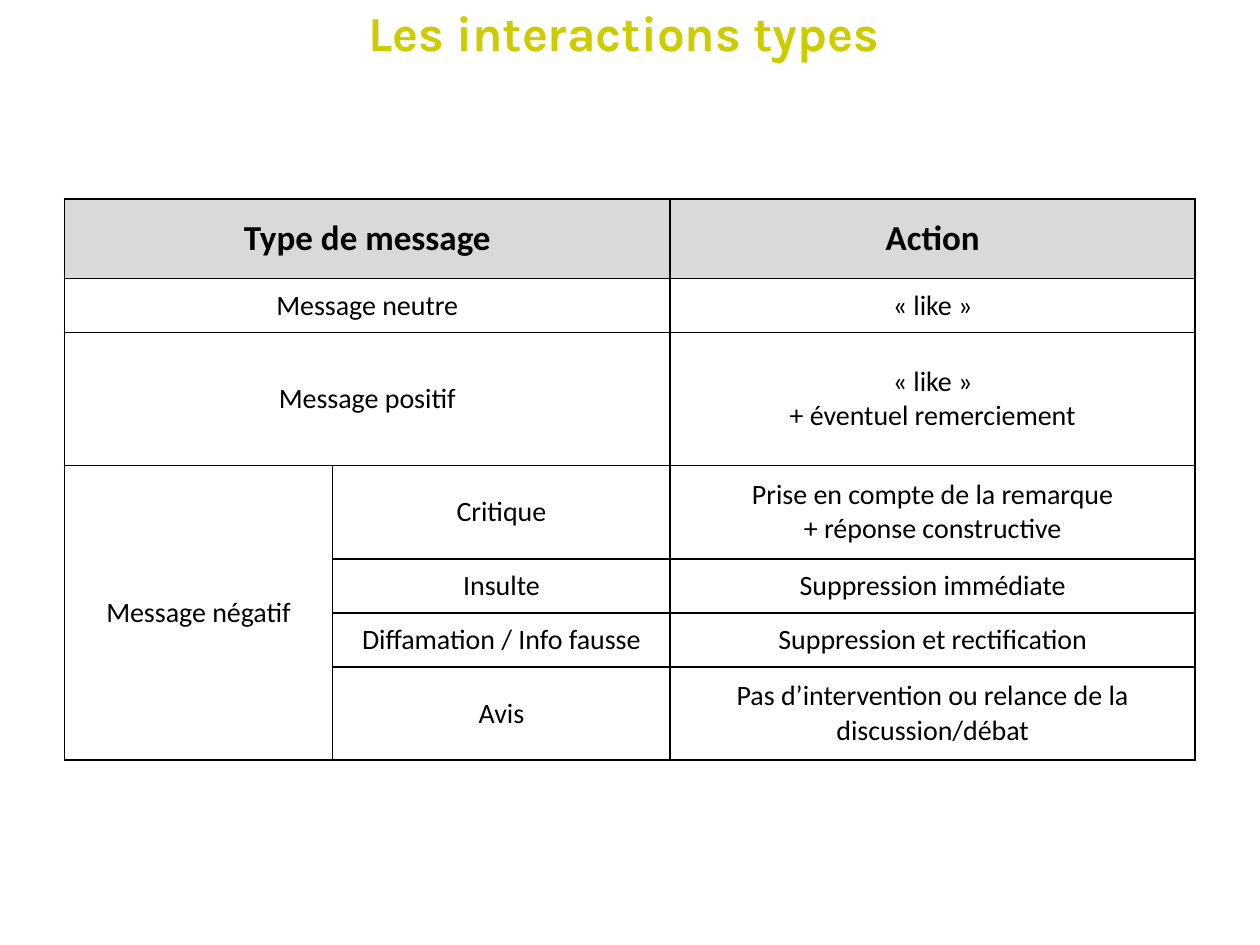
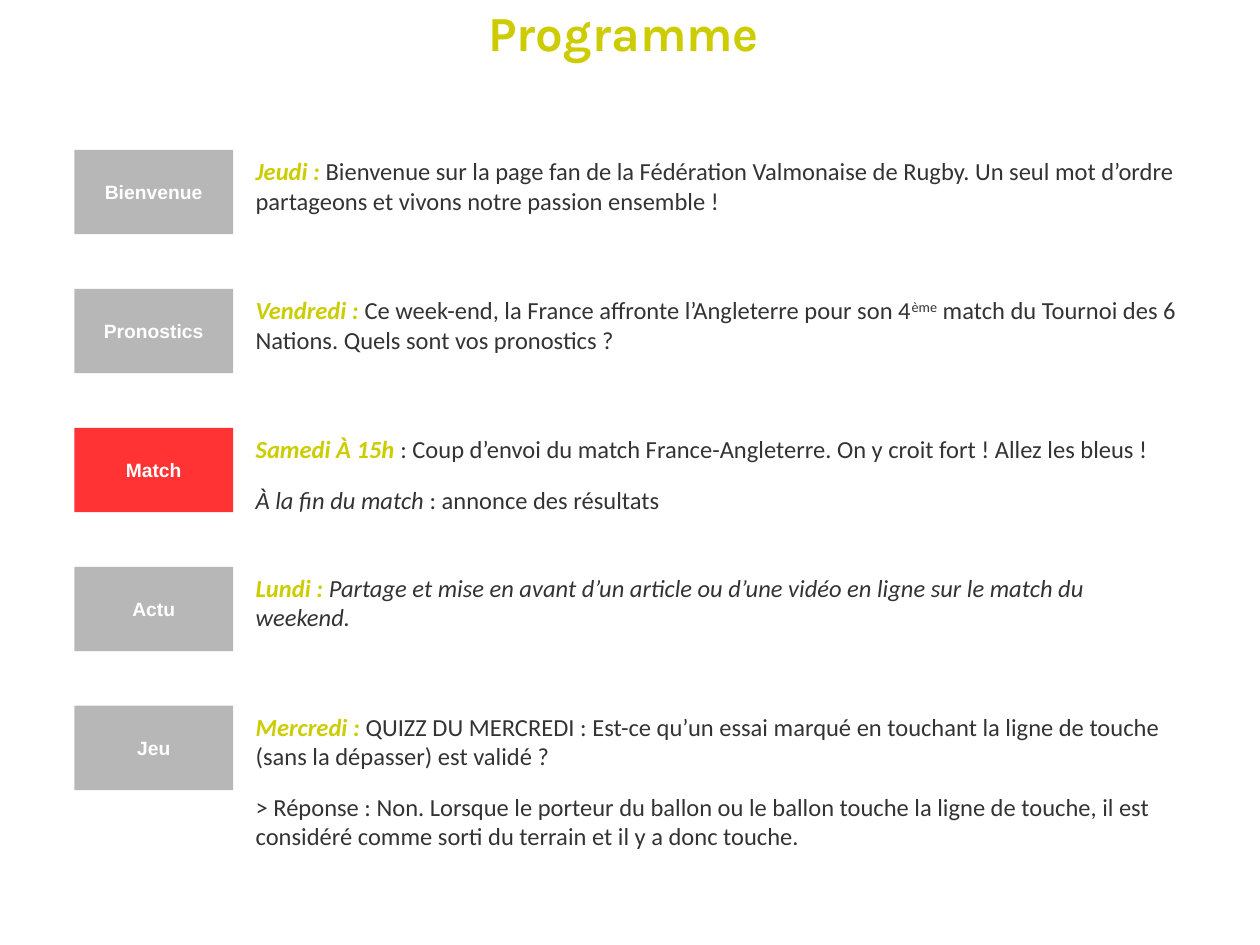
from lxml import etree
from pptx import Presentation
from pptx.dml.color import RGBColor
from pptx.enum.shapes import MSO_SHAPE
from pptx.enum.text import MSO_ANCHOR, PP_ALIGN
from pptx.oxml.ns import qn
from pptx.util import Pt

RECT = MSO_SHAPE.RECTANGLE
MIDDLE = MSO_ANCHOR.MIDDLE
LEFT, CENTER = PP_ALIGN.LEFT, PP_ALIGN.CENTER

LIME, BLACK, WHITE, INK = "CCCC00", "000000", "FFFFFF", "333333"
HEAD, GRAY, RED = "D9D9D9", "A6A6A6", "FF0000"

# Table: (row, column, lines, rows spanned, columns spanned)
CELLS = [
    (0, 0, ["Type de message"], 1, 2),
    (0, 2, ["Action"], 1, 1),
    (1, 0, ["Message neutre"], 1, 2),
    (1, 2, ["« like »"], 1, 1),
    (2, 0, ["Message positif"], 1, 2),
    (2, 2, ["« like »", "+ éventuel remerciement"], 1, 1),
    (3, 0, ["Message négatif"], 4, 1),
    (3, 1, ["Critique"], 1, 1),
    (3, 2, ["Prise en compte de la remarque", "+ réponse constructive"], 1, 1),
    (4, 1, ["Insulte"], 1, 1),
    (4, 2, ["Suppression immédiate"], 1, 1),
    (5, 1, ["Diffamation / Info fausse"], 1, 1),
    (5, 2, ["Suppression et rectification"], 1, 1),
    (6, 1, ["Avis"], 1, 1),
    (6, 2, ["Pas d’intervention ou relance de la discussion/débat"], 1, 1),
]
WIDTHS = [153.3, 192.9, 300]
HEIGHTS = [45.5, 30.9, 76, 53.4, 30.9, 30.9, 53.1]

# Programme: (label, colour, paragraphs of (text, style) runs)
STEPS = [
    ("Bienvenue", GRAY, [
        [("Jeudi : ", "day"),
         ("Bienvenue sur la page fan de la Fédération Valmonaise de Rugby. "
          "Un seul mot d’ordre partageons et vivons notre passion ensemble !", "")]]),
    ("Pronostics", GRAY, [
        [("Vendredi : ", "day"),
         ("Ce week-end, la France affronte l’Angleterre pour son 4", ""),
         ("ème", "sup"),
         (" match du Tournoi des 6 Nations. Quels sont vos pronostics ?", "")]]),
    ("Match", RED, [
        [("Samedi À 15h ", "day"),
         (": Coup d’envoi du match France-Angleterre. On y croit fort ! "
          "Allez les bleus !", "")],
        [("À la fin du match ", "italic"), (": annonce des résultats", "")]]),
    ("Actu", GRAY, [
        [("Lundi : ", "day"),
         ("Partage et mise en avant d’un article ou d’une vidéo en ligne "
          "sur le match du weekend.", "italic")]]),
    ("Jeu", GRAY, [
        [("Mercredi : ", "day"),
         ("QUIZZ DU MERCREDI : Est-ce qu’un essai marqué en touchant la ligne "
          "de touche (sans la dépasser) est validé ?", "")],
        [("> Réponse : Non. Lorsque le porteur du ballon ou le ballon touche la "
          "ligne de touche, il est considéré comme sorti du terrain et il y a "
          "donc touche.", "")]]),
]
TOP, PITCH, TAG_H = 85.7, 79.4, 48.2


def rgb(code):
    return RGBColor.from_string(code)


def style(para, name, size, color, bold=False, align=CENTER):
    para.alignment = align
    font = para.font
    font.name, font.size, font.bold = name, Pt(size), bold
    font.color.rgb = rgb(color)


def paras(frame, count):
    """Return the first paragraph of the frame and enough new ones."""
    return [frame.paragraphs[0]] + [frame.add_paragraph() for _ in range(count - 1)]


def text_box(slide, *place):
    frame = slide.shapes.add_textbox(*map(Pt, place)).text_frame
    frame.word_wrap = True
    return frame


def new_slide(deck, title):
    slide = deck.slides.add_slide(deck.slide_layouts[6])
    frame = text_box(slide, 0, 0, 720, 36)
    frame.vertical_anchor = MIDDLE
    frame.margin_right = Pt(14.4)
    frame.text = title
    style(frame.paragraphs[0], "Karla", 28, LIME, True)
    return slide


def border(cell):
    props = cell._tc.get_or_add_tcPr()
    for side in ("lnL", "lnR", "lnT", "lnB"):
        line = etree.SubElement(props, qn("a:" + side), w=str(Pt(1)))
        fill = etree.SubElement(line, qn("a:solidFill"))
        etree.SubElement(fill, qn("a:srgbClr"), val=BLACK)


def add_grid(slide):
    place = map(Pt, (36.8, 113.6, sum(WIDTHS), sum(HEIGHTS)))
    grid = slide.shapes.add_table(len(HEIGHTS), len(WIDTHS), *place).table
    grid.first_row = grid.horz_banding = False
    for col, width in zip(grid.columns, WIDTHS):
        col.width = Pt(width)
    for row, height in zip(grid.rows, HEIGHTS):
        row.height = Pt(height)
    for cell in grid.iter_cells():
        border(cell)
        cell.fill.background()
    for row, col, lines, down, across in CELLS:
        cell = grid.cell(row, col)
        if down * across > 1:
            cell.merge(grid.cell(row + down - 1, col + across - 1))
        cell.vertical_anchor = MIDDLE
        head = row == 0
        if head:
            cell.fill.solid()
            cell.fill.fore_color.rgb = rgb(HEAD)
        for para, line in zip(paras(cell.text_frame, len(lines)), lines):
            para.text = line
            style(para, "Calibri", 20 if head else 16, BLACK, head)


def add_tag(slide, label, color, top):
    tag = slide.shapes.add_shape(RECT, *map(Pt, (42.5, top, 90.7, TAG_H)))
    tag.shadow.inherit = False
    tag.fill.solid()
    tag.fill.fore_color.rgb = rgb(color)
    shade = tag.element.spPr.find(".//" + qn("a:srgbClr"))
    etree.SubElement(shade, qn("a:alpha"), val="80000")
    tag.line.fill.background()
    frame = tag.text_frame
    frame.vertical_anchor = MIDDLE
    frame.text = label
    style(frame.paragraphs[0], "Arial", 11, WHITE, True)


def add_post(slide, texts, top):
    frame = text_box(slide, 139, top, 545, 49.7 if top < 400 else 93.6)
    for index, (para, runs) in enumerate(zip(paras(frame, len(texts)), texts)):
        style(para, "Calibri", 14, INK, align=LEFT)
        para.space_before = Pt(6 if index else 0)
        para.space_after = Pt(6)
        for text, look in runs:
            run = para.add_run()
            run.text = text
            if look in ("day", "italic"):
                run.font.italic = True
            if look == "day":
                run.font.bold = True
                run.font.color.rgb = rgb(LIME)
            if look == "sup":
                run._r.get_or_add_rPr().set("baseline", "30000")


def main():
    deck = Presentation()
    deck.slide_width, deck.slide_height = Pt(720), Pt(540)
    add_grid(new_slide(deck, "Les interactions types"))
    plan = new_slide(deck, "Programme")
    for index, (label, color, texts) in enumerate(STEPS):
        top = TOP + index * PITCH
        add_tag(plan, label, color, top)
        add_post(plan, texts, top)
    deck.save("out.pptx")


if __name__ == "__main__":
    main()
